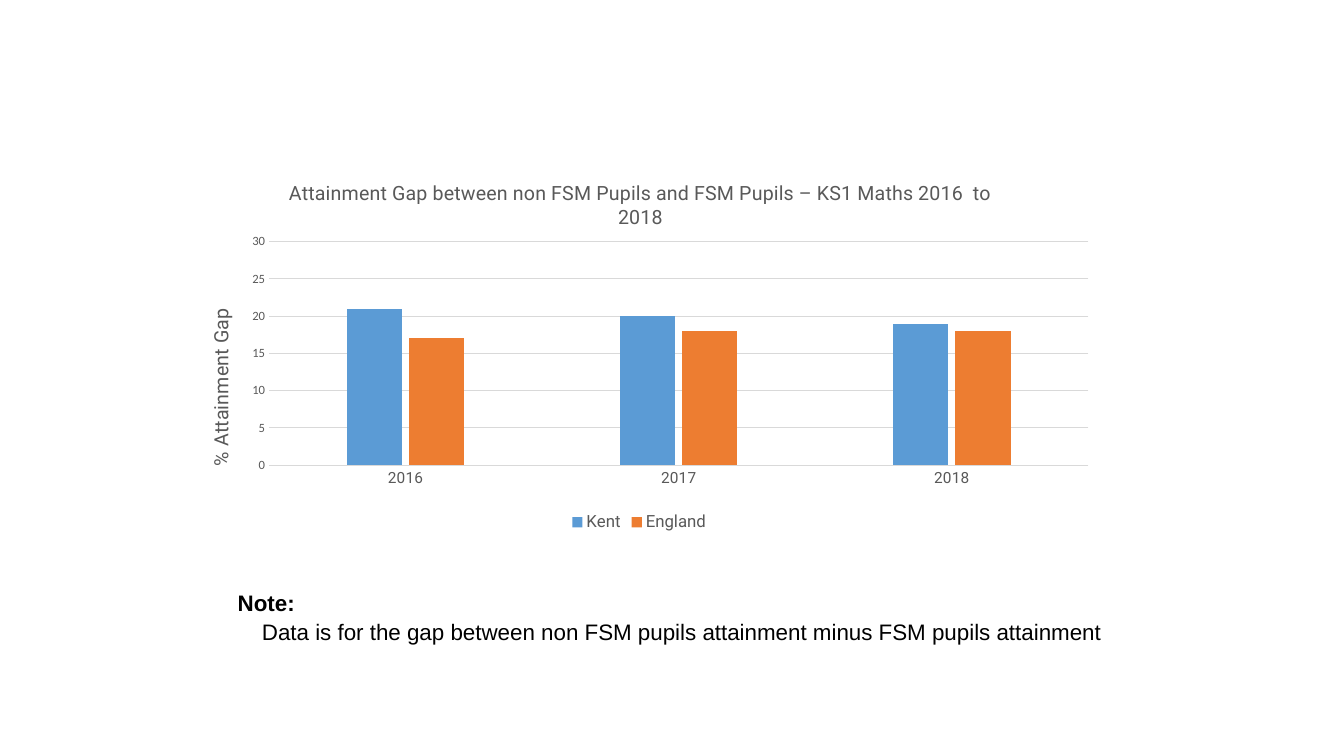
from lxml import etree
from pptx import Presentation
from pptx.chart.data import CategoryChartData
from pptx.dml.color import RGBColor
from pptx.enum.chart import XL_CHART_TYPE, XL_LEGEND_POSITION, XL_TICK_MARK
from pptx.oxml.ns import qn
from pptx.util import Inches, Pt

BLACK = RGBColor(0x00, 0x00, 0x00)
GREY = RGBColor(0x59, 0x59, 0x59)
LIGHT_GREY = RGBColor(0xD9, 0xD9, 0xD9)
BLUE = RGBColor(0x5B, 0x9B, 0xD5)
ORANGE = RGBColor(0xED, 0x7D, 0x31)

YEARS = ["2016", "2017", "2018"]
GAPS = {"Kent": ([21, 20, 19], BLUE), "England": ([17, 18, 18], ORANGE)}


def style_font(font, name, size, color, bold=False):
    formats = {"name": name, "size": Pt(size), "bold": bold}
    for attribute, value in formats.items():
        setattr(font, attribute, value)
    font.color.rgb = color


def place_in_chart(element, **settings):
    """Fix a chart part's place, in fractions of the chart's size."""
    layout = element.find(qn("c:layout"))
    if layout is None:
        layout = etree.Element(qn("c:layout"))
        text = element.find(qn("c:tx"))
        element.insert(0 if text is None else 1, layout)
    manual = etree.SubElement(layout, qn("c:manualLayout"))
    for tag, value in settings.items():
        etree.SubElement(manual, qn(f"c:{tag}")).set("val", str(value))


def add_title(owner, text, x, y):
    """Title a chart or an axis, with its top left corner at x, y."""
    owner.has_title = True
    title = owner.chart_title if hasattr(owner, "chart_title") else owner.axis_title
    run = title.text_frame.paragraphs[0].add_run()
    run.text = text
    style_font(run.font, "Roboto", 14, GREY)
    place_in_chart(title._element, xMode="edge", yMode="edge", x=x, y=y)


def add_gap_chart(slide, left, top, width, height):
    data = CategoryChartData()
    data.categories = YEARS
    for region, (values, _) in GAPS.items():
        data.add_series(region, values)
    chart = slide.shapes.add_chart(
        XL_CHART_TYPE.COLUMN_CLUSTERED, left, top, width, height, data
    ).chart
    style_font(chart.font, "Calibri", 10, BLACK)
    add_title(
        chart,
        "Attainment Gap between non FSM Pupils and FSM Pupils – KS1 Maths 2016  to 2018",
        0.11, 0.05,
    )

    chart.has_legend = True
    chart.legend.position = XL_LEGEND_POSITION.BOTTOM
    chart.legend.include_in_layout = False
    style_font(chart.legend.font, "Roboto", 12, GREY)

    years, gap = chart.category_axis, chart.value_axis
    for axis, font_name, size in ((years, "Roboto", 11), (gap, "Calibri", 9)):
        axis.major_tick_mark = axis.minor_tick_mark = XL_TICK_MARK.NONE
        style_font(axis.tick_labels.font, font_name, size, GREY)
    gap.minimum_scale, gap.maximum_scale, gap.major_unit = 0, 30, 5
    gap.format.line.fill.background()
    for line in (years.format.line, gap.major_gridlines.format.line):
        line.color.rgb = LIGHT_GREY
        line.width = Pt(0.75)
    add_title(gap, "% Attainment Gap", 0.02, 0.39)

    columns = chart.plots[0]
    columns.gap_width, columns.overlap = 280, -12
    columns.vary_by_categories = False
    for series, (_, color) in zip(columns.series, GAPS.values()):
        series.format.fill.solid()
        series.format.fill.fore_color.rgb = color
    plot_area = chart._chartSpace.find(f".//{qn('c:plotArea')}")
    place_in_chart(plot_area, layoutTarget="inner", xMode="edge", yMode="edge",
                   x=0.092, y=0.225, w=0.903, h=0.588)


def add_note(slide, left, top, width, height):
    frame = slide.shapes.add_textbox(left, top, width, height).text_frame
    frame.word_wrap = True
    heading, explanation = frame.paragraphs[0], frame.add_paragraph()
    explanation.space_before = Pt(1)
    explanation._p.get_or_add_pPr().set("marL", str(Inches(0.24)))
    for paragraph, text, bold in (
        (heading, "Note:", True),
        (explanation, "Data is for the gap between non FSM pupils attainment "
                      "minus FSM pupils attainment", False),
    ):
        run = paragraph.add_run()
        run.text = text
        style_font(run.font, "Arial", 16, BLACK, bold)


def main():
    presentation = Presentation()
    presentation.slide_width = Inches(13.33)
    presentation.slide_height = Inches(7.5)
    slide = presentation.slides.add_slide(presentation.slide_layouts[6])
    add_note(slide, Inches(2.26), Inches(5.8), Inches(9), Inches(0.94))
    add_gap_chart(slide, Inches(1.84), Inches(1.55), Inches(9), Inches(3.77))
    presentation.save("out.pptx")


if __name__ == "__main__":
    main()
